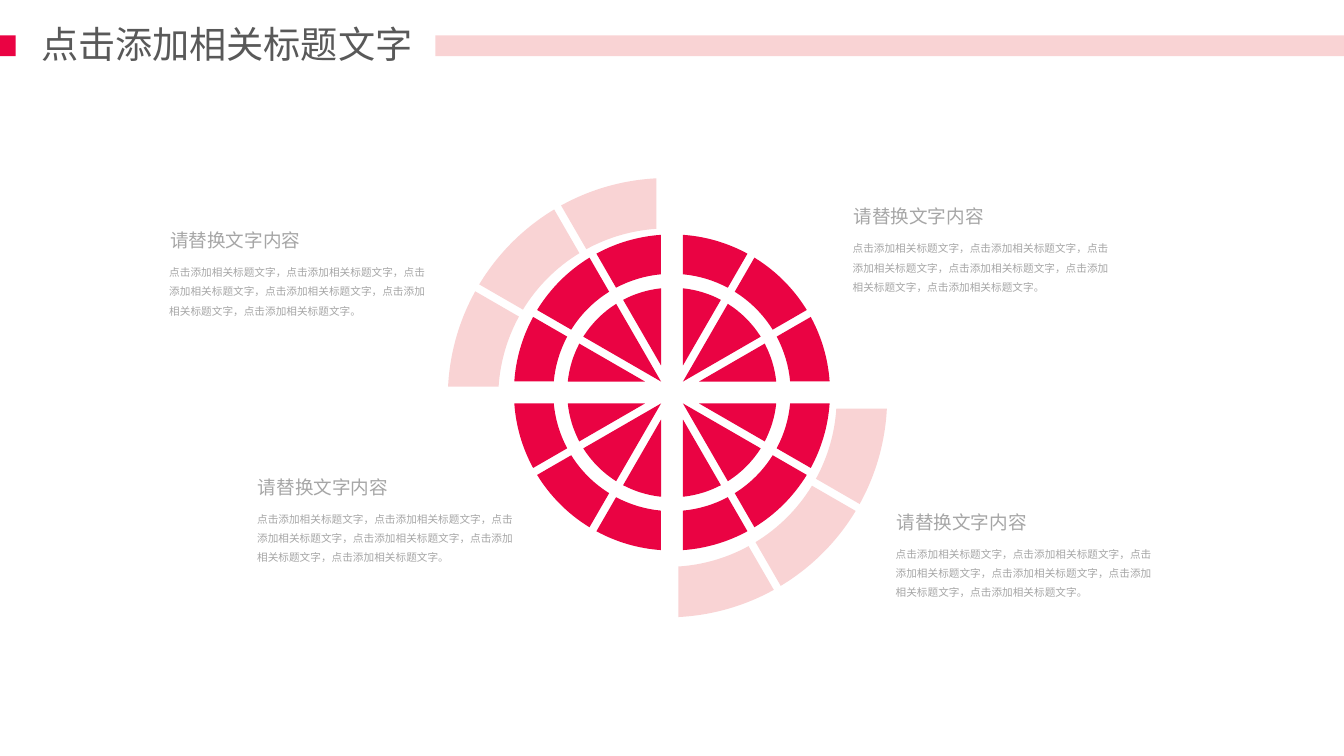
from math import asin, atan, atan2, cos, hypot, radians, sin, tan

from pptx import Presentation
from pptx.dml.color import RGBColor
from pptx.enum.shapes import MSO_SHAPE as Shape
from pptx.enum.text import MSO_ANCHOR as Anchor, MSO_AUTO_SIZE as AutoSize, PP_ALIGN as Align
from pptx.oxml.ns import qn
from pptx.util import Inches, Pt

SLIDE_W, SLIDE_H = Inches(14.06), Inches(7.91)

RED = RGBColor(0xEA, 0x03, 0x43)
PINK = RGBColor(0xF9, 0xD3, 0xD4)
DARK_GRAY = RGBColor(0x59, 0x59, 0x59)
LIGHT_GRAY = RGBColor(0xA6, 0xA6, 0xA6)
CJK_FONT = "Noto Sans CJK SC"

TITLE = "点击添加相关标题文字"
HEADING = "请替换文字内容"
BODY = "，".join([TITLE] * 6) + "。"

# Left and top of each text block, in percent of the slide
BLOCK_CORNERS = [(11.95, 29.08), (18.49, 61.69), (62.8, 25.92), (66, 66.37)]

# Half gaps in percent of the slide height: along the axes and between slices
AXIS_GAP, SLICE_GAP = 1.45, 0.53
SLICES = [(0, AXIS_GAP, SLICE_GAP), (30, SLICE_GAP, SLICE_GAP), (60, SLICE_GAP, AXIS_GAP)]


def across(percent):
    return round(SLIDE_W * percent / 100)


def down(percent):
    return round(SLIDE_H * percent / 100)


def area(left, top, width, height):
    return across(left), down(top), across(width), down(height)


def paint(shape, color):
    shape.fill.solid()
    shape.fill.fore_color.rgb = color
    shape.line.fill.background()
    shape.shadow.inherit = False


def add_bar(slide, box, color):
    paint(slide.shapes.add_shape(Shape.RECTANGLE, *area(*box)), color)


def write(shape, text, *, size, color, font=CJK_FONT, spacing=1.0, inset=0.1, wrap=True):
    frame = shape.text_frame
    frame.word_wrap = wrap
    frame.auto_size = AutoSize.SHAPE_TO_FIT_TEXT
    frame.vertical_anchor = Anchor.TOP
    frame.margin_left = frame.margin_right = Inches(inset)
    frame.margin_top = frame.margin_bottom = Inches(0.05)
    paragraph = frame.paragraphs[0]
    paragraph.alignment = Align.LEFT
    paragraph.line_spacing = spacing
    run = paragraph.add_run()
    run.text = text
    run.font.size = Pt(size)
    run.font.color.rgb = color
    run.font.name = font
    east_asian = run.font._element.makeelement(qn("a:ea"), {"typeface": CJK_FONT})
    run.font._element.find(qn("a:latin")).addnext(east_asian)


def slice_outline(start, start_gap, end_gap, inner, outer):
    """Polar points of a 30° slice: outer curve, then inner curve or tip."""
    first, span = radians(start), radians(30)

    def arc(radius):
        begin = first + asin(start_gap / radius)
        end = first + span - asin(end_gap / radius)
        pull = 4 / 3 * tan((end - begin) / 4)
        control, turn = radius * hypot(1, pull), atan(pull)
        return [(radius, begin), (control, begin + turn), (control, end - turn), (radius, end)]

    if inner:
        return arc(outer) + arc(inner)[::-1]
    # The slice tip lies where its two sides meet
    along = (end_gap + start_gap * cos(span)) / sin(span)
    tip = hypot(along, start_gap), first + atan2(start_gap, along)
    return arc(outer) + [tip]


def bend(ring, curve_starts):
    """Turn each three segments from the given places in an outline into a curve."""
    for move in list(ring._element.iter(qn("a:moveTo"))):
        segments = []
        for step in move.itersiblings():
            if step.tag != qn("a:lnTo"):
                break
            segments.append(step)
        for place in curve_starts:
            head, *rest = segments[place:place + 3]
            curve = head.makeelement(qn("a:cubicBezTo"), {})
            head.addprevious(curve)
            for segment in (head, *rest):
                curve.append(segment[0])
                segment.getparent().remove(segment)


def add_ring(slide, center, inner, outer, color, quadrants=range(4)):
    center_x, center_y = across(center[0]), down(center[1])
    builder = None
    for quadrant in quadrants:
        for start, start_gap, end_gap in SLICES:
            outline = slice_outline(start + 90 * quadrant, start_gap, end_gap, inner, outer)
            points = [(center_x + down(radius * cos(angle)), center_y + down(radius * sin(angle)))
                      for radius, angle in outline]
            if builder is None:
                builder = slide.shapes.build_freeform(*points[0])
            else:
                builder.move_to(*points[0])
            builder.add_line_segments(points[1:], close=True)
    ring = builder.convert_to_shape()
    bend(ring, (0, 4) if inner else (0,))
    paint(ring, color)


def add_text_block(slide, left, top):
    body = slide.shapes.add_textbox(*area(left, top + 4.68, 20.63, 8.85))
    write(body, BODY, size=8, color=LIGHT_GRAY, spacing=1.5, inset=0.09)
    heading = slide.shapes.add_textbox(*area(left, top, 18.92, 4.93))
    write(heading, HEADING, size=14, color=LIGHT_GRAY, font="Arial", spacing=1.2, inset=0.1)


def main():
    deck = Presentation()
    deck.slide_width, deck.slide_height = SLIDE_W, SLIDE_H
    slide = deck.slides.add_slide(deck.slide_layouts[5])

    # Header
    add_bar(slide, (32.4, 4.68, 67.6, 2.75), PINK)
    add_bar(slide, (0, 4.68, 1.17, 2.75), RED)
    title = slide.shapes.title
    title.left, title.top, title.width, title.height = area(2.35, 2.15, 29.37, 7.21)
    write(title, TITLE, size=28, color=DARK_GRAY, wrap=False)

    # Wheel: outer arcs at bottom right and top left, full ring, inner disc
    add_ring(slide, (49.66, 52.6), 22.38, 29.05, PINK, quadrants=(0, 2))
    add_ring(slide, (50, 51.92), 15.7, 20.9, RED)
    add_ring(slide, (50, 51.92), 0, 13.86, RED)

    # Text blocks around the wheel
    for left, top in BLOCK_CORNERS:
        add_text_block(slide, left, top)

    deck.save("out.pptx")


if __name__ == "__main__":
    main()
